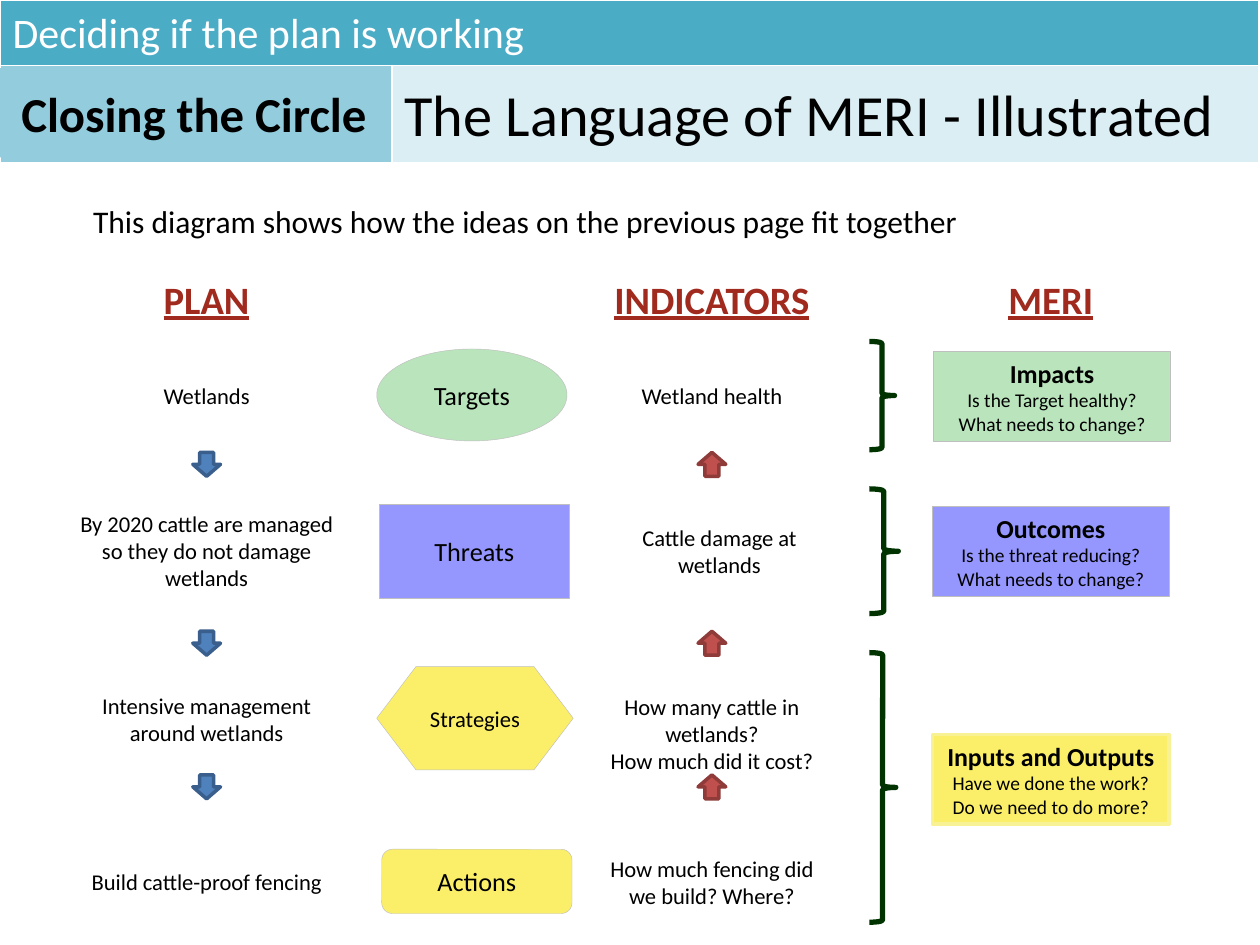
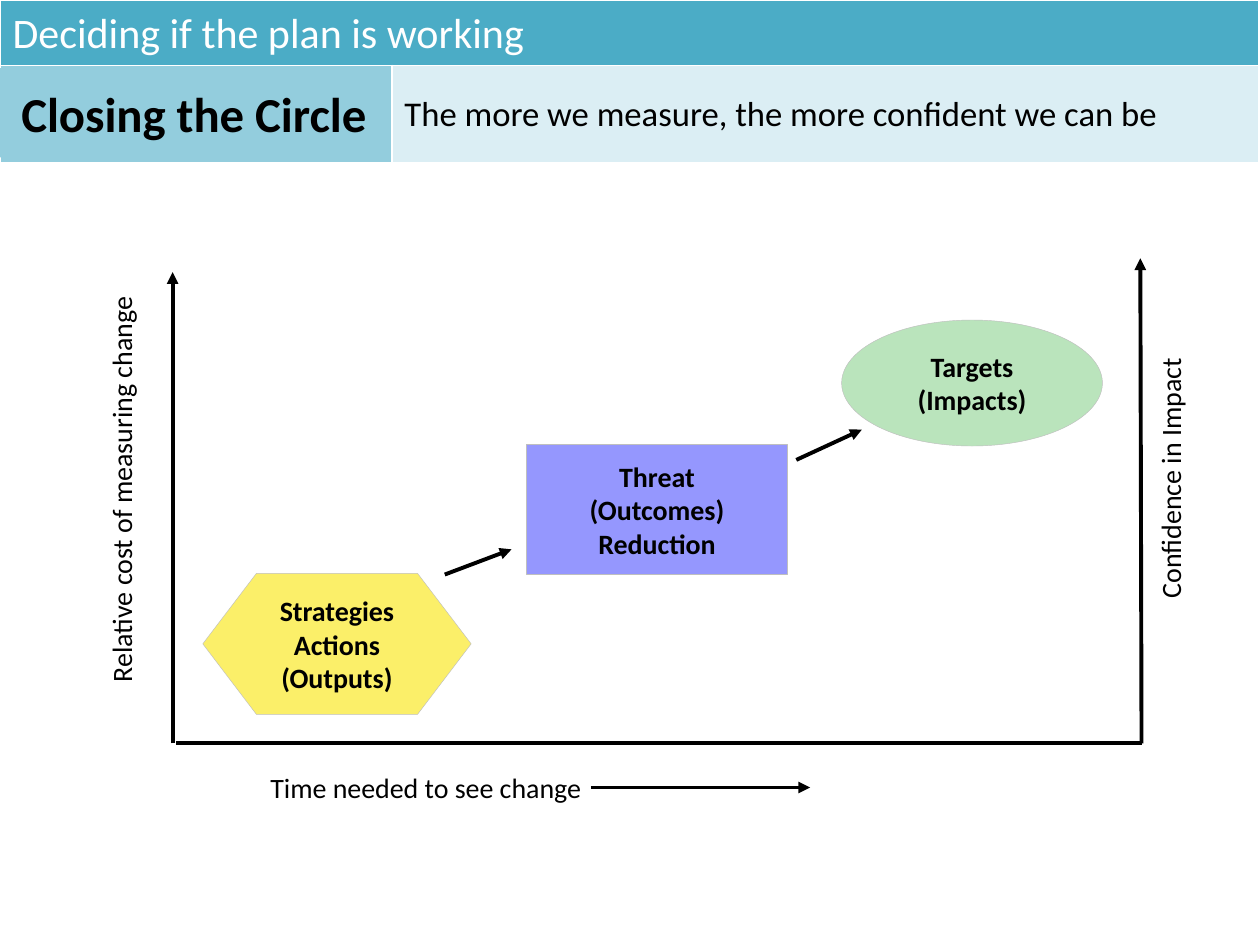
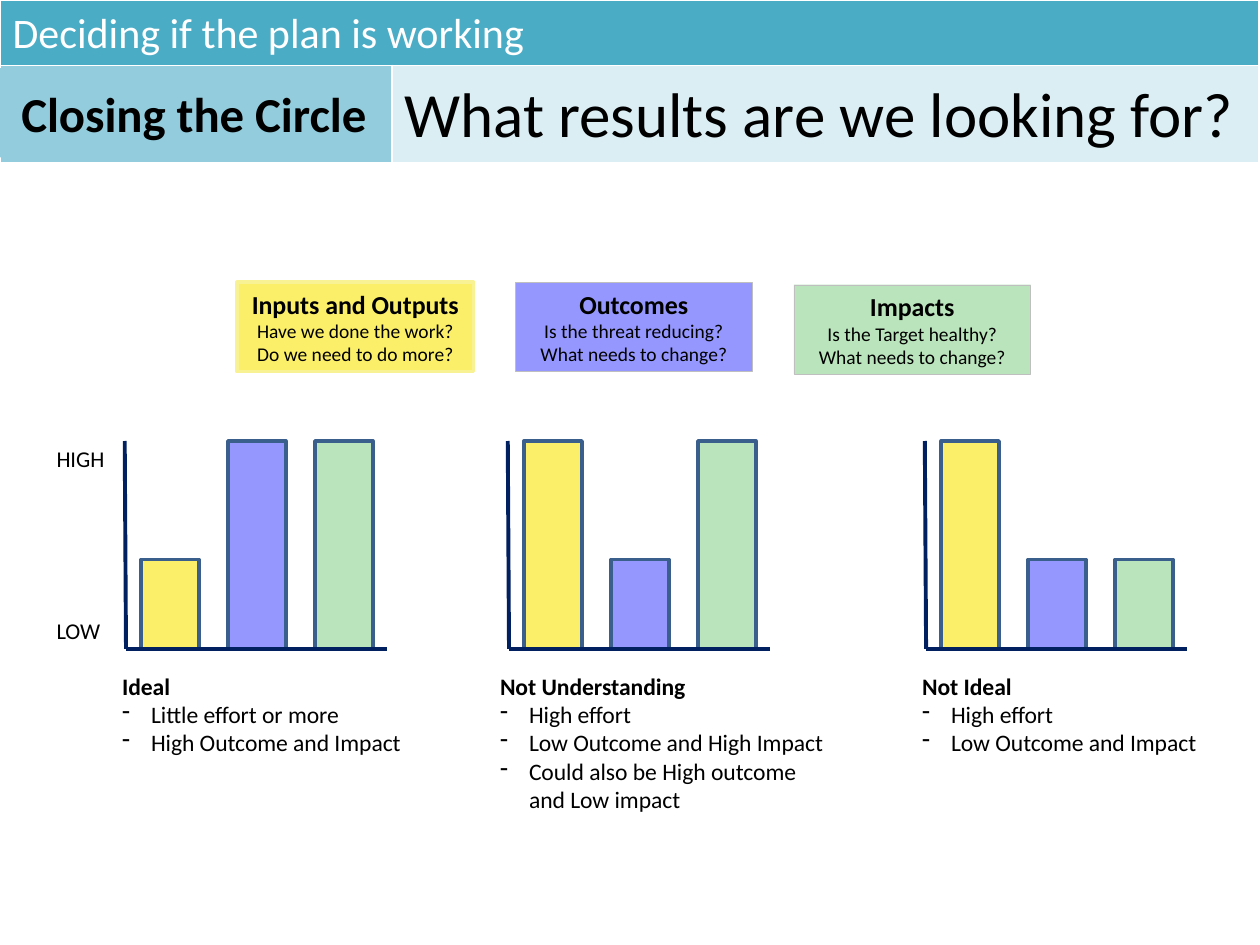
from lxml import etree
from pptx import Presentation
from pptx.dml.color import RGBColor
from pptx.enum import shapes, text
from pptx.oxml.ns import qn
from pptx.util import Inches, Pt

GREEN, BLUE, GOLD = "BAE4BC", "9597FE", "FBEF69"
GREY, BLACK, NAVY = "BFBFBF", "000000", "002060"
KIND = shapes.MSO_SHAPE
LEFT, MID = text.PP_ALIGN.LEFT, text.PP_ALIGN.CENTER


def put(page, kind, box, fill=None, line=None, width=0.25):
    """Add a preset shape, or a text box when kind is None."""
    spot = [Inches(n) for n in box]
    if kind is None:
        return page.shapes.add_textbox(*spot)
    shape = page.shapes.add_shape(kind, *spot)
    shape.shadow.inherit = False
    if fill:
        shape.fill.solid()
        shape.fill.fore_color.rgb = RGBColor.from_string(fill)
    else:
        shape.fill.background()
    shape.line.color.rgb = RGBColor.from_string(line)
    shape.line.width = Pt(width)
    return shape


def write(shape, lines, size, align=MID, wrap=True, dash=False, rest=None,
          color=BLACK, **look):
    """Fill a shape with lines; rest restyles, and dash bullets, all but the first."""
    frame = shape.text_frame
    form = {"word_wrap": wrap, "auto_size": text.MSO_AUTO_SIZE.NONE,
            "vertical_anchor": text.MSO_ANCHOR.MIDDLE}
    for key, val in form.items():
        setattr(frame, key, val)
    for i, line in enumerate(lines):
        para = frame.add_paragraph() if i else frame.paragraphs[0]
        para.alignment = align
        para.space_before = Pt(0)
        props = para._p.get_or_add_pPr()
        inset = Inches(0.23) if dash and i else 0
        props.set("marL", str(inset))
        props.set("indent", str(-inset))
        if inset:
            etree.SubElement(props, qn("a:buChar"), char="-")
        else:
            etree.SubElement(props, qn("a:buNone"))
        run = para.add_run()
        run.text = line
        font = {"name": "Calibri", "size": Pt(size), **look}
        if i and rest:
            font.update(rest)
        for key, val in font.items():
            setattr(run.font, key, val)
        run.font.color.rgb = RGBColor.from_string(color)


deck = Presentation()
deck.slide_width, deck.slide_height = Inches(10), Inches(7.5)

# Shared layout: places of the heading texts
plan = deck.slide_layouts[3]
spots = {0: (3.11, 0.54, 6.88, 0.71), 1: (0, 0, 9.98, 0.51), 2: (0, 0.54, 3.08, 0.71)}
for idx, box in spots.items():
    hold = plan.placeholders.get(idx)
    for key, val in zip(("left", "top", "width", "height"), box):
        setattr(hold, key, Inches(val))

# Slides with their headings
pages = []
for topic, size in (("The Language of MERI - Illustrated", 33.3),
                    ("The more we measure, the more confident we can be", 19.8),
                    ("What results are we looking for?", 36)):
    page = deck.slides.add_slide(plan)
    title, head, tag = [page.placeholders[i] for i in range(3)]
    write(title, [topic], size, LEFT)
    write(head, ["Deciding if the plan is working"], 24, LEFT, color="FFFFFF")
    tag.fill.solid()
    tag.fill.fore_color.rgb = RGBColor.from_string("93CDDD")
    write(tag, ["Closing the Circle"], 27.9, bold=True)
    pages.append(page)
lang, climb, goals = pages

# Shared layout: coloured band behind the headings
band = lang.shapes.add_table(2, 2, 0, 0, Inches(9.99), Inches(1.29))
grid = band.table
grid.horz_banding = False
for i, (wide, high) in enumerate(((3.11, 0.52), (6.88, 0.77))):
    grid.columns[i].width = Inches(wide)
    grid.rows[i].height = Inches(high)
grid.cell(0, 0).merge(grid.cell(0, 1))
for cell, tone in zip(grid.iter_cells(), ("4BACC6", "4BACC6", "93CDDD", "DBEEF4")):
    cell.fill.solid()
    cell.fill.fore_color.rgb = RGBColor.from_string(tone)
band.element.nvGraphicFramePr.cNvPr.set("id", "20")
plan.shapes.element.append(band.element)

# MERI question boxes on the first and last slides
health = ["Impacts", "Is the Target healthy?", "What needs to change?"]
threat = ["Outcomes", "Is the threat reducing?", "What needs to change?"]
work = ["Inputs and Outputs", "Have we done the work?", "Do we need to do more?"]
for lines, fill, edge, width, near, far in (
        (health, GREEN, GREY, 0.25, (7.41, 2.79), (6.3, 2.26)),
        (threat, BLUE, GREY, 0.25, (7.4, 4.02), (4.09, 2.24)),
        (work, GOLD, "F9F295", 2, (7.4, 5.83), (1.88, 2.24))):
    for page, spot in ((lang, near), (goals, far)):
        box = put(page, KIND.RECTANGLE, (*spot, 1.88, 0.71), fill, edge, width)
        write(box, lines, 14.8, bold=True, rest={"size": Pt(11.1), "bold": False})

# Slide 1: plan, indicators and MERI
intro = put(lang, None, (0.64, 1.55, 8.71, 0.4))
write(intro, ["This diagram shows how the ideas on the previous page fit together"], 18, LEFT)
for name, left in (("PLAN", 0.56), ("INDICATORS", 4.57), ("MERI", 7.26)):
    write(put(lang, None, (left, 2.08, 2.16, 0.58)), [name], 22.1,
          color="A12A1E", bold=True, underline=True)

for kind, name, box, fill, size in (
        (KIND.OVAL, "Targets", (2.99, 2.77, 1.51, 0.73), GREEN, 15),
        (KIND.RECTANGLE, "Threats", (3.01, 4, 1.51, 0.75), BLUE, 15),
        (KIND.FLOWCHART_PREPARATION, "Strategies", (2.99, 5.29, 1.56, 0.82), GOLD, 12.9),
        (KIND.ROUNDED_RECTANGLE, "Actions", (3.03, 6.74, 1.51, 0.51), GOLD, 15)):
    write(put(lang, kind, box, fill, GREY), [name], size)

for left, wide, mid, lines in (
        (0.46, 2.36, 3.14, ["Wetlands"]),
        (0.46, 2.36, 4.37, ["By 2020 cattle are managed so they do not damage wetlands"]),
        (0.46, 2.36, 5.71, ["Intensive management around wetlands"]),
        (0.46, 2.36, 7, ["Build cattle-proof fencing"]),
        (4.65, 2, 3.14, ["Wetland health"]),
        (4.68, 2.06, 4.37, ["Cattle damage at wetlands"]),
        (4.65, 2, 5.82, ["How many cattle in wetlands?", "How much did it cost?"]),
        (4.65, 2, 7, ["How much fencing did we build? Where?"])):
    write(put(lang, None, (left, mid - 0.38, wide, 0.76)), lines, 12.9)

for top in (3.59, 5.01, 6.15):
    put(lang, KIND.DOWN_ARROW, (1.53, top, 0.22, 0.19), "4F81BD", "3A5F8C", 2)
    put(lang, KIND.UP_ARROW, (5.54, top, 0.22, 0.19), "C0504D", "8E3B39", 2)
for top, wide, high in ((2.71, 0.2, 0.86), (3.88, 0.23, 0.99), (5.18, 0.21, 2.14)):
    put(lang, KIND.RIGHT_BRACE, (6.9, top, wide, high), None, "003300", 3)

# Slide 2: cost and confidence rise with time
for kind, box, fill, lines in (
        (KIND.OVAL, (6.68, 2.54, 2.07, 1), GREEN, ["Targets", "(Impacts)"]),
        (KIND.RECTANGLE, (4.18, 3.53, 2.07, 1.03), BLUE,
         ["Threat", "(Outcomes)", "Reduction"]),
        (KIND.FLOWCHART_PREPARATION, (1.61, 4.55, 2.13, 1.12), GOLD,
         ["Strategies", "Actions", "(Outputs)"])):
    write(put(climb, kind, box, fill, GREY), lines, 16, bold=True)
for name, box, turn in (
        ("Relative cost of measuring change", (-0.69, 3.7, 3.3, 0.37), 270),
        ("Confidence in Impact", (8.22, 3.61, 2.13, 0.37), 270),
        ("Time needed to see change", (2.03, 6.06, 2.7, 0.37), 0)):
    label = put(climb, None, box)
    label.rotation = turn
    write(label, [name], 16, wrap=False)
strokes = [(climb, ends, BLACK, tip) for ends, tip in (
    ((1.37, 5.9, 1.37, 2.16), True),
    ((9.06, 5.9, 9.05, 2.05), True),
    ((1.4, 5.9, 9.06, 5.9), False),
    ((3.53, 4.56, 4.06, 4.36), True),
    ((6.32, 3.65, 6.84, 3.41), True),
    ((4.69, 6.25, 6.43, 6.25), True))]

# Slide 3: sketched bars for each result
base, low, high = 5.15, 0.71, 1.65
for left, side, wide, bars, lines in (
        (0.99, 0.87, 2.62, (low, high, high),
         ["Ideal", "Little effort or more", "High Outcome and Impact"]),
        (4.03, 3.87, 2.81, (high, low, high),
         ["Not Understanding", "High effort", "Low Outcome and High Impact",
          "Could also be High outcome and Low impact"]),
        (7.34, 7.22, 2.57, (high, low, low),
         ["Not Ideal", "High effort", "Low Outcome and Impact"])):
    for i, (tall, fill) in enumerate(zip(bars, (GOLD, BLUE, GREEN))):
        put(goals, KIND.RECTANGLE, (left + 0.13 + 0.69 * i, base - tall, 0.46, tall),
            fill, "3A5F8C", 2)
    strokes.append((goals, (left, base - high, left + 0.01, base), NAVY, False))
    strokes.append((goals, (left + 0.01, base, left + 2.08, base), NAVY, False))
    note = put(goals, None, (side, 5.28, wide, 1.24))
    write(note, lines, 13.5, LEFT, dash=True, bold=True, rest={"bold": False})
    note.text_frame.vertical_anchor = text.MSO_ANCHOR.TOP
for name, top in (("HIGH", 3.48), ("LOW", 4.84)):
    write(put(goals, None, (0.35, top, 0.59, 0.32)), [name], 12.9, LEFT, wrap=False)

# Axes and arrows
for page, ends, tone, tip in strokes:
    rod = page.shapes.add_connector(shapes.MSO_CONNECTOR.STRAIGHT,
                                    *[Inches(n) for n in ends])
    rod.line.color.rgb = RGBColor.from_string(tone)
    rod.line.width = Pt(2.25)
    props = rod.element.spPr
    if tip:
        etree.SubElement(props.find(qn("a:ln")), qn("a:tailEnd"), type="triangle")
    etree.SubElement(props, qn("a:effectLst"))

deck.save("out.pptx")
